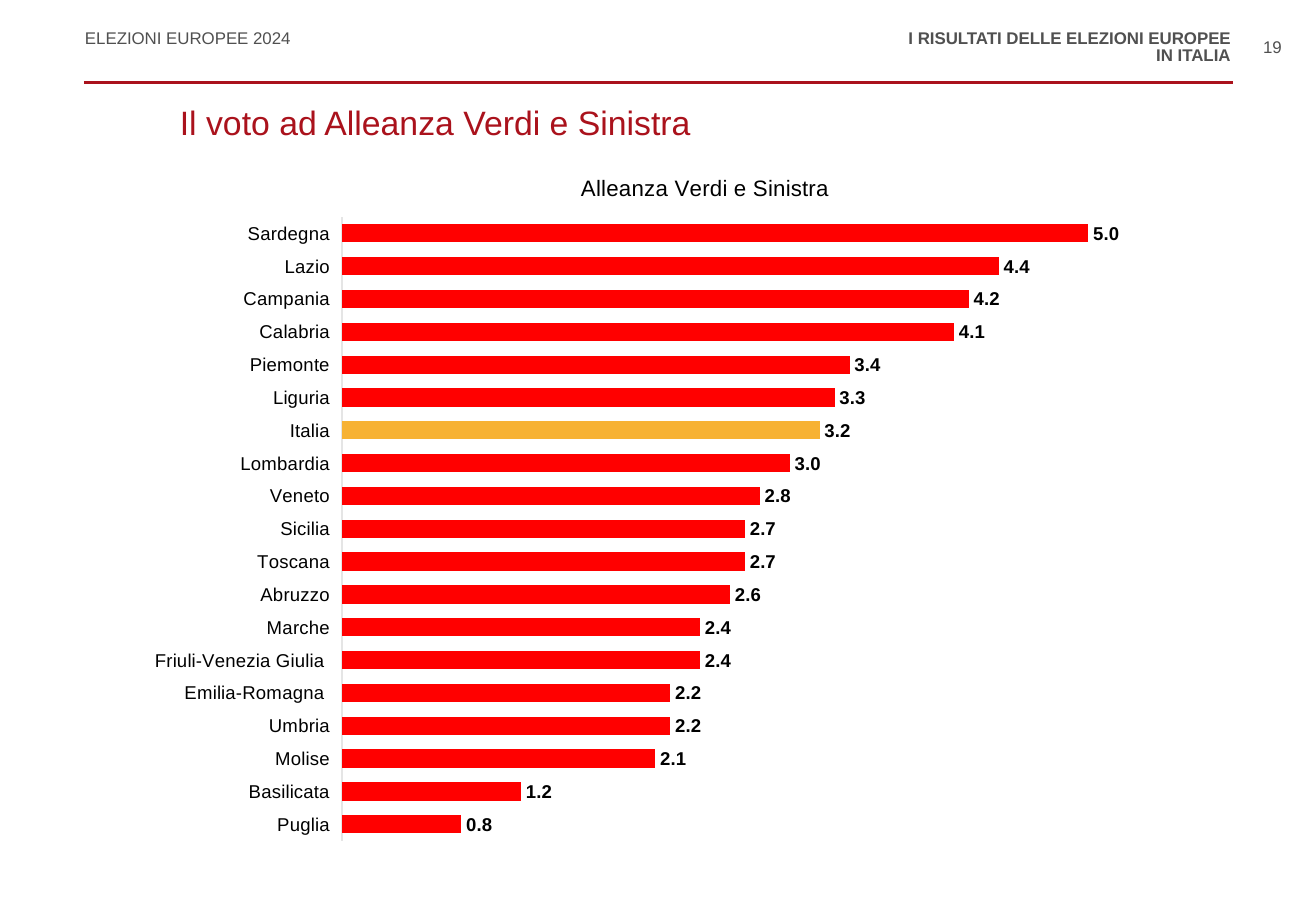
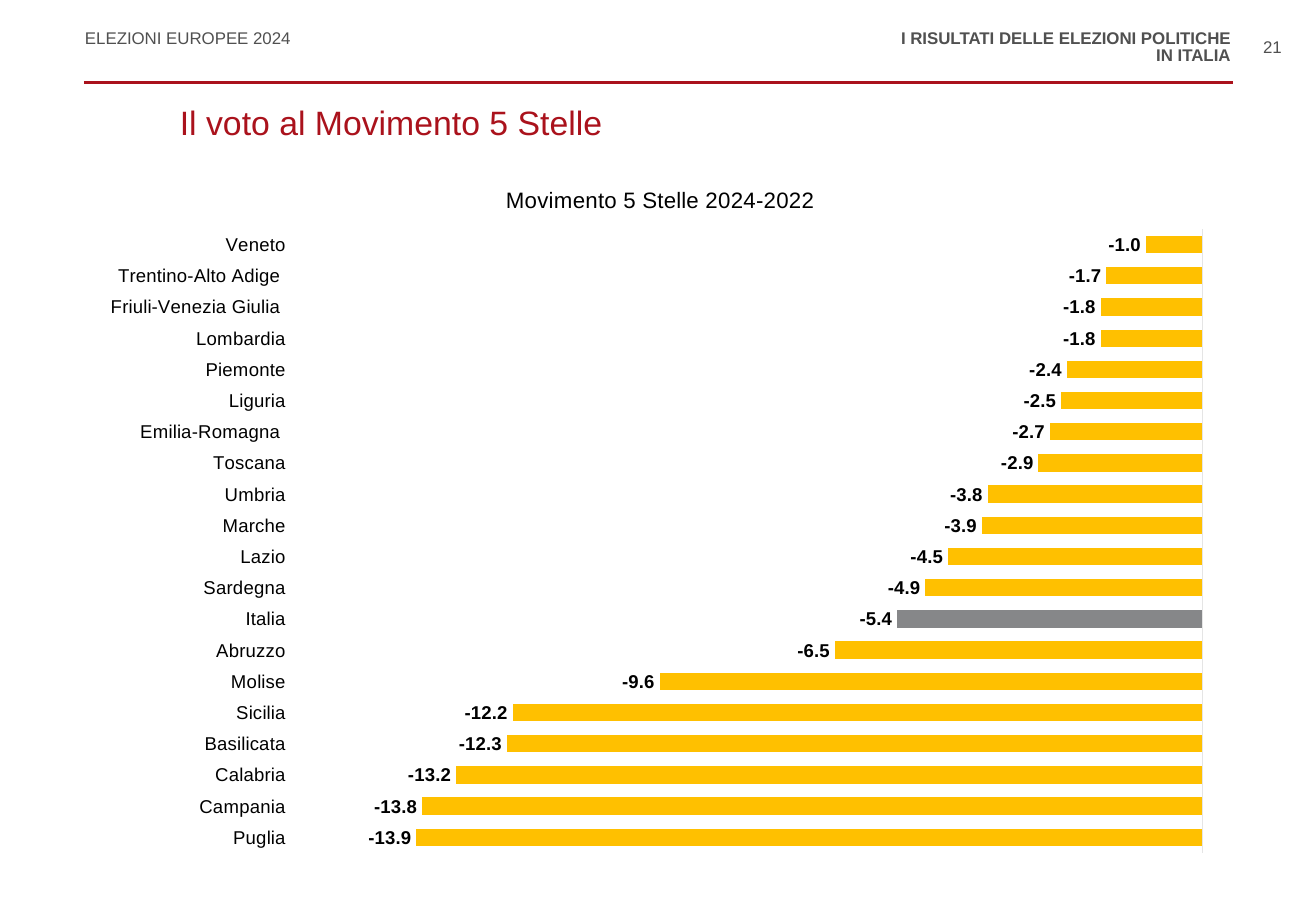
from dataclasses import dataclass

from lxml import etree
from pptx import Presentation, util as u
from pptx.chart import data as cd
from pptx.dml import color as col
from pptx.enum import chart as ec, shapes as es, text as et
from pptx.oxml import ns

Pt = u.Pt


@dataclass(frozen=True)
class Theme:
    font: str = "Arial"
    red: str = "AA121C"
    gray: str = "505050"
    black: str = "000000"
    axis: str = "E5E5E5"
    head: float = 20
    small: float = 10
    label: float = 11
    name: float = 13.2


@dataclass(frozen=True)
class Box:
    left: float
    top: float
    width: float
    height: float

    def place(self) -> list:
        return [Pt(v) for v in (self.left, self.top, self.width, self.height)]


@dataclass(frozen=True)
class Page:
    number: str
    topic: str
    head: str
    name: str
    box: Box        # chart frame
    plot: Box       # bars, within the frame
    caption: Box    # chart title, within the frame
    low: float
    high: float
    fill: str
    mark: str       # fill of the national bar
    rows: dict


T = Theme()
NATION = "Italia"

PAGES = [
    Page("19", "I RISULTATI DELLE ELEZIONI EUROPEE",
         "Il voto ad Alleanza Verdi e Sinistra", "Alleanza Verdi e Sinistra",
         Box(78.5, 85, 674.6, 421.9), Box(124.2, 43.6, 531, 369.8),
         Box(263.5, 15.5, 0, 0), 0, 6, "FF0000", "F7B234",
         {"Puglia": 0.8, "Basilicata": 1.2, "Molise": 2.1, "Umbria": 2.2,
          "Emilia-Romagna ": 2.2, "Friuli-Venezia Giulia ": 2.4,
          "Marche": 2.4, "Abruzzo": 2.6, "Toscana": 2.7, "Sicilia": 2.7,
          "Veneto": 2.8, "Lombardia": 3.0, "Italia": 3.2, "Liguria": 3.3,
          "Piemonte": 3.4, "Calabria": 4.1, "Campania": 4.2, "Lazio": 4.4,
          "Sardegna": 5.0}),
    Page("21", "I RISULTATI DELLE ELEZIONI POLITICHE",
         "Il voto al Movimento 5 Stelle", "Movimento 5 Stelle 2024-2022",
         Box(51.8, 92.2, 674.6, 421.9), Box(124.7, 43.6, 536.3, 369.8),
         Box(245.6, 15.5, 0, 0), -16, 0, "FFC000", "868789",
         {"Puglia": -13.9, "Campania": -13.8, "Calabria": -13.2,
          "Basilicata": -12.3, "Sicilia": -12.2, "Molise": -9.6,
          "Abruzzo": -6.5, "Italia": -5.4, "Sardegna": -4.9, "Lazio": -4.5,
          "Marche": -3.9, "Umbria": -3.8, "Toscana": -2.9,
          "Emilia-Romagna ": -2.7, "Liguria": -2.5, "Piemonte": -2.4,
          "Lombardia": -1.8, "Friuli-Venezia Giulia ": -1.8,
          "Trentino-Alto Adige ": -1.7, "Veneto": -1.0}),
]


# Helpers
def style(item, **values) -> None:
    for key, value in values.items():
        setattr(item, key, value)


def ink(font, size: float, color: str, bold: bool = False) -> None:
    style(font, name=T.font, size=Pt(size), bold=bold)
    font.color.rgb = col.RGBColor.from_string(color)


def paint(fill, color: str) -> None:
    fill.solid()
    fill.fore_color.rgb = col.RGBColor.from_string(color)


def write(slide, box: Box, lines: list[str], size: float, color: str,
          bold: bool = False, align=et.PP_ALIGN.LEFT, inset: float = 0,
          wrap: bool = True, space: float = 0.85) -> None:
    frame = slide.shapes.add_textbox(*box.place()).text_frame
    sides = ("left", "top", "right", "bottom")
    style(frame, word_wrap=wrap, text="\n".join(lines),
          **{f"margin_{side}": Pt(inset) for side in sides})
    for para in frame.paragraphs:
        style(para, alignment=align, line_spacing=space)
        ink(para.runs[0].font, size, color, bold)


def fix(host, frame: Box, part: Box, inner: bool = False) -> None:
    """Place a chart part by hand, as shares of the chart frame."""
    tag = ns.qn("c:layout")
    node = host.find(tag)
    if node is None:
        node = etree.Element(tag)
        host.insert(0, node)
    hand = etree.SubElement(node, ns.qn("c:manualLayout"))
    vals = {"xMode": "edge", "yMode": "edge",
            "x": part.left / frame.width, "y": part.top / frame.height}
    if inner:
        vals = {"layoutTarget": "inner", **vals,
                "w": part.width / frame.width, "h": part.height / frame.height}
    for key, value in vals.items():
        etree.SubElement(hand, ns.qn(f"c:{key}")).set("val", str(value))


# Header, rule and title
def draw_head(slide, page: Page) -> None:
    write(slide, Box(50.4, 18, 299.5, 10.8), ["ELEZIONI EUROPEE 2024"],
          T.small, T.gray)
    rule = slide.shapes.add_connector(es.MSO_CONNECTOR.STRAIGHT, Pt(49.7),
                                      Pt(49), Pt(730.8), Pt(49))
    rule.line.width = Pt(1.5)
    paint(rule.line.fill, T.red)
    etree.SubElement(rule.element.spPr, ns.qn("a:effectLst"))
    write(slide, Box(106.6, 64.1, 635, 41), [page.head], T.head, T.red)
    write(slide, Box(744.5, 18, 19.4, 18), [page.number], T.small, T.gray,
          align=et.PP_ALIGN.CENTER, inset=3.6, wrap=False, space=1.0)
    write(slide, Box(402.5, 18, 326.9, 20.5), [page.topic, "IN ITALIA"],
          T.small, T.gray, bold=True, align=et.PP_ALIGN.RIGHT)


# Bar chart
def draw_chart(slide, page: Page) -> None:
    data = cd.CategoryChartData(number_format="0.0")
    data.categories = list(page.rows)
    data.add_series(page.name, list(page.rows.values()))
    chart = slide.shapes.add_chart(ec.XL_CHART_TYPE.BAR_CLUSTERED,
                                   *page.box.place(), data).chart
    style(chart, has_legend=False, has_title=True)
    ink(chart.font, T.label, T.black)

    title = chart.chart_title
    title.text_frame.text = page.name
    ink(title.text_frame.paragraphs[0].runs[0].font, T.name, T.black)
    fix(title.format.line and chart.element.find(".//" + ns.qn("c:title")),
        page.box, page.caption)
    fix(chart.element.find(".//" + ns.qn("c:plotArea")),
        page.box, page.plot, inner=True)

    axis = chart.category_axis
    style(axis, tick_label_position=ec.XL_TICK_LABEL_POSITION.LOW,
          major_tick_mark=ec.XL_TICK_MARK.NONE, has_major_gridlines=False)
    ink(axis.tick_labels.font, T.label, T.black)
    axis.format.line.width = Pt(0.75)
    paint(axis.format.line.fill, T.axis)
    style(chart.value_axis, visible=False, has_major_gridlines=False,
          minimum_scale=page.low, maximum_scale=page.high)

    plot = chart.plots[0]
    style(plot, gap_width=80, vary_by_categories=False, has_data_labels=True)
    style(plot.data_labels, show_value=True, number_format="0.0",
          number_format_is_linked=False,
          position=ec.XL_LABEL_POSITION.OUTSIDE_END)
    ink(plot.data_labels.font, T.label, T.black, bold=True)
    bars = plot.series[0]
    bars.invert_if_negative = False
    paint(bars.format.fill, page.fill)
    spot = bars.points[list(page.rows).index(NATION)]
    paint(spot.format.fill, page.mark)
    # Keep the fill of the marked bar when its value is below zero
    point = bars.format and chart.element.find(".//" + ns.qn("c:dPt"))
    flag = point.find(ns.qn("c:invertIfNegative"))
    if flag is None:
        flag = etree.Element(ns.qn("c:invertIfNegative"))
        point.insert(1, flag)
    flag.set("val", "0")


def main() -> None:
    deck = Presentation()
    style(deck, slide_width=Pt(780), slide_height=Pt(540))
    for page in PAGES:
        slide = deck.slides.add_slide(deck.slide_layouts[6])
        draw_head(slide, page)
        draw_chart(slide, page)
    deck.save("out.pptx")


if __name__ == "__main__":
    main()
